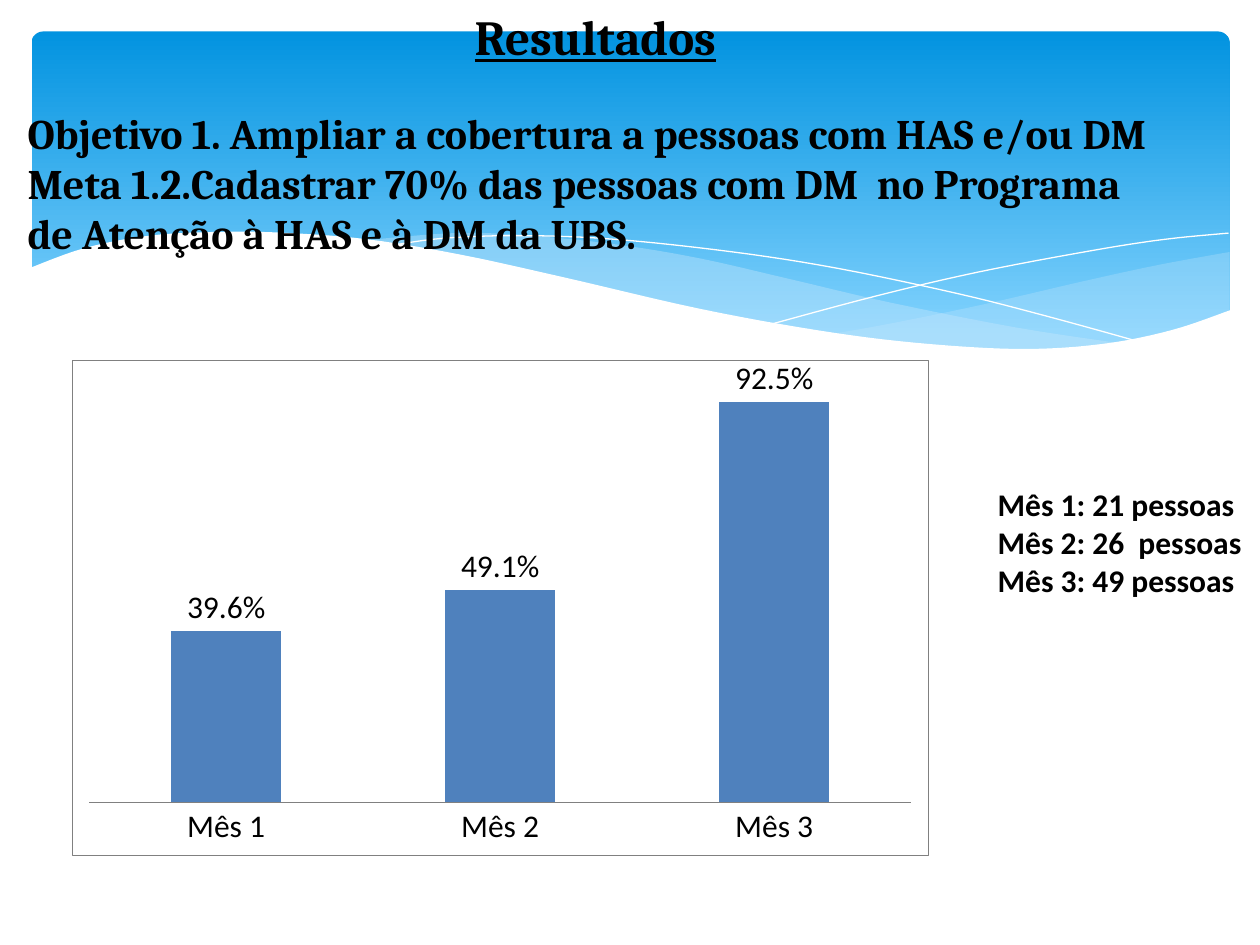
from lxml import etree
from pptx import Presentation
from pptx.chart.data import CategoryChartData
from pptx.dml.color import RGBColor
from pptx.enum.chart import XL_CHART_TYPE as ChartType
from pptx.enum.chart import XL_LABEL_POSITION as LabelPosition
from pptx.enum.chart import XL_TICK_MARK as TickMark
from pptx.enum.shapes import MSO_SHAPE as Shape
from pptx.enum.text import PP_ALIGN as Align
from pptx.oxml.ns import qn
from pptx.util import Inches, Pt

BLACK = RGBColor(0x00, 0x00, 0x00)
WHITE = RGBColor(0xFF, 0xFF, 0xFF)
GRAY = RGBColor(0x80, 0x80, 0x80)
SKY_TOP = RGBColor(0x02, 0x93, 0xE0)
SKY_BOTTOM = RGBColor(0x83, 0xD3, 0xFE)
PALE_BLUE = RGBColor(0xC6, 0xE7, 0xFC)
BAR_BLUE = RGBColor(0x4F, 0x81, 0xBD)

RIGHT_SWELL_TOP = [(9.76, 2), (9.21, 2.1), (8.61, 2.23), (7.79, 2.42), (7.06, 2.57), (6.61, 2.65)]
RIGHT_SWELL_BOTTOM = [(6.61, 2.65), (7.05, 2.71), (7.57, 2.76), (8.14, 2.78), (8.72, 2.74),
                      (9.28, 2.63), (9.76, 2.47)]
MIDDLE_SWELL_TOP = [(8.93, 2.73), (8.07, 2.6), (7.06, 2.4), (6.29, 2.22), (5.55, 2.05),
                    (4.89, 1.94), (4.2, 1.87), (3.61, 1.85), (2.86, 1.91)]
MIDDLE_SWELL_BOTTOM = [(2.86, 1.91), (3.62, 2.03), (4.49, 2.22), (5.3, 2.4), (6.01, 2.55),
                       (6.8, 2.68), (7.48, 2.76), (8.18, 2.78), (8.93, 2.73)]
FALLING_LINE = [(3.09, 1.95), (3.53, 1.89), (4.16, 1.87), (4.89, 1.9), (5.82, 2),
                (6.65, 2.13), (7.6, 2.33), (8.31, 2.51), (9.07, 2.72)]
RISING_LINE = [(6.13, 2.57), (6.95, 2.35), (7.76, 2.16), (8.66, 1.99), (9.24, 1.9), (9.75, 1.85)]
WHITE_WAVE = [(9.77, 2.46), (9.3, 2.62), (8.75, 2.73), (8.09, 2.77), (7.26, 2.72), (6.48, 2.62),
              (5.55, 2.45), (4.47, 2.2), (3.65, 2.02), (2.92, 1.9), (2.3, 1.85), (1.77, 1.84),
              (1.19, 1.87), (0.67, 1.97), (0.23, 2.13)]


def smooth_curve(points, steps=6):
    """Return samples of a Catmull-Rom curve through the points."""
    padded = [points[0], *points, points[-1]]
    samples = [points[0]]
    for a, b, c, d in zip(padded, padded[1:], padded[2:], padded[3:]):
        for step in range(1, steps + 1):
            t = step / steps
            samples.append(tuple(
                q + t / 2 * (r - p + t * (2 * p - 5 * q + 4 * r - s + t * (3 * (q - r) + s - p)))
                for p, q, r, s in zip(a, b, c, d)))
    return samples


def add_outline(slide, points, fill=None, opacity=100):
    """Add a filled closed outline, or a white hairline when there is no fill."""
    (x, y), *rest = [(Inches(x), Inches(y)) for x, y in points]
    builder = slide.shapes.build_freeform(x, y)
    builder.add_line_segments(rest, close=fill is not None)
    shape = builder.convert_to_shape()
    shape.shadow.inherit = False
    if fill is None:
        shape.fill.background()
        shape.line.color.rgb = WHITE
        shape.line.width = Pt(0)
        return
    shape.fill.solid()
    shape.fill.fore_color.rgb = fill
    shape.line.fill.background()
    if opacity < 100:
        color = shape.fill._xPr.find(qn("a:solidFill"))[0]
        etree.SubElement(color, qn("a:alpha")).set("val", str(opacity * 1000))


def add_banner(slide):
    """Add the rounded gradient banner and its waves."""
    banner = slide.shapes.add_shape(
        Shape.ROUNDED_RECTANGLE, Inches(0.25), Inches(0.25), Inches(9.51), Inches(2.7))
    banner.adjustments[0] = 0.034
    banner.shadow.inherit = False
    banner.line.fill.background()
    banner.fill.gradient()
    banner.fill.gradient_angle = 270
    stops = zip(banner.fill.gradient_stops, (SKY_TOP, SKY_BOTTOM), (0, 0.9))
    for stop, color, position in stops:
        stop.color.rgb = color
        stop.position = position

    add_outline(slide, smooth_curve(RIGHT_SWELL_TOP) + smooth_curve(RIGHT_SWELL_BOTTOM),
                PALE_BLUE, 29)
    add_outline(slide, smooth_curve(MIDDLE_SWELL_TOP) + smooth_curve(MIDDLE_SWELL_BOTTOM),
                PALE_BLUE, 40)
    for line in (FALLING_LINE, RISING_LINE):
        add_outline(slide, smooth_curve(line))
    add_outline(slide, smooth_curve(WHITE_WAVE) + [(0.23, 3.29), (9.77, 3.29)], WHITE)


def style_font(font, name, size, bold=False):
    """Give a font its name, size and weight in black."""
    font.name = name
    font.size = Pt(size)
    font.bold = bold
    font.color.rgb = BLACK


def add_text(slide, box, lines, font_name, size):
    """Add a wrapped bold text box and return its paragraphs."""
    text_frame = slide.shapes.add_textbox(*map(Inches, box)).text_frame
    text_frame.word_wrap = True
    text_frame.text = "\n".join(lines)
    for paragraph in text_frame.paragraphs:
        style_font(paragraph.runs[0].font, font_name, size, bold=True)
    return text_frame.paragraphs


def add_heading(slide):
    """Add the underlined title with the objective and goal below it."""
    title, objective, _ = add_text(slide, (0.12, 0, 9.21, 2.2), [
        "Resultados",
        "Objetivo 1. Ampliar a cobertura a pessoas com HAS e/ou DM",
        "Meta 1.2.Cadastrar 70% das pessoas com DM  no Programa de Atenção à HAS e à DM da UBS.",
    ], "Cambria", 24)
    title.alignment = Align.CENTER
    title.runs[0].font.size = Pt(28)
    title.runs[0].font.underline = True
    objective.space_before = Pt(24)


def add_frame(chart):
    """Fill the chart and plot areas with white and draw the chart border."""
    chart_space = chart._chartSpace
    plot_area = chart_space.chart.plotArea
    fill = f'<a:solidFill><a:srgbClr val="{WHITE}"/></a:solidFill>'
    border = f'<a:ln w="3175"><a:solidFill><a:srgbClr val="{GRAY}"/></a:solidFill></a:ln>'
    template = ('<c:spPr xmlns:c="http://schemas.openxmlformats.org/drawingml/2006/chart" '
                'xmlns:a="http://schemas.openxmlformats.org/drawingml/2006/main">{}</c:spPr>')
    plot_area.append(etree.fromstring(template.format(fill)))
    chart_space.chart.addnext(etree.fromstring(template.format(fill + border)))


def add_coverage_chart(slide):
    """Add the column chart of monthly coverage."""
    data = CategoryChartData(number_format="0.0%")
    data.categories = ["Mês 1", "Mês 2", "Mês 3"]
    data.add_series("Series 1", (0.396, 0.491, 0.925))
    chart = slide.shapes.add_chart(
        ChartType.COLUMN_CLUSTERED, Inches(0.57), Inches(2.85), Inches(6.8), Inches(3.94), data).chart
    style_font(chart.font, "Calibri", 10)
    chart.has_title = False
    chart.has_legend = False

    category_axis = chart.category_axis
    category_axis.major_tick_mark = TickMark.NONE
    category_axis.format.line.color.rgb = GRAY
    category_axis.format.line.width = Pt(0.25)
    style_font(category_axis.tick_labels.font, "Calibri", 18)

    value_axis = chart.value_axis
    value_axis.minimum_scale, value_axis.maximum_scale = 0, 1
    value_axis.major_unit = 0.1
    value_axis.has_major_gridlines = False
    value_axis.visible = False

    plot = chart.plots[0]
    plot.gap_width, plot.overlap = 150, -25
    plot.vary_by_categories = False
    fill = plot.series[0].format.fill
    fill.solid()
    fill.fore_color.rgb = BAR_BLUE
    labels = plot.series[0].data_labels
    labels.show_value = True
    labels.number_format = "0.0%"
    labels.number_format_is_linked = False
    labels.position = LabelPosition.OUTSIDE_END
    style_font(labels.font, "Calibri", 18)
    add_frame(chart)


def main():
    """Build the slide and save it."""
    presentation = Presentation()
    presentation.slide_width, presentation.slide_height = Inches(10), Inches(7.5)
    slide = presentation.slides.add_slide(presentation.slide_layouts[6])
    add_banner(slide)
    add_heading(slide)
    add_text(slide, (7.82, 3.8, 2.44, 1.01),
             ["Mês 1: 21 pessoas", "Mês 2: 26  pessoas", "Mês 3: 49 pessoas"], "Calibri", 18)
    add_coverage_chart(slide)
    presentation.save("out.pptx")


main()
